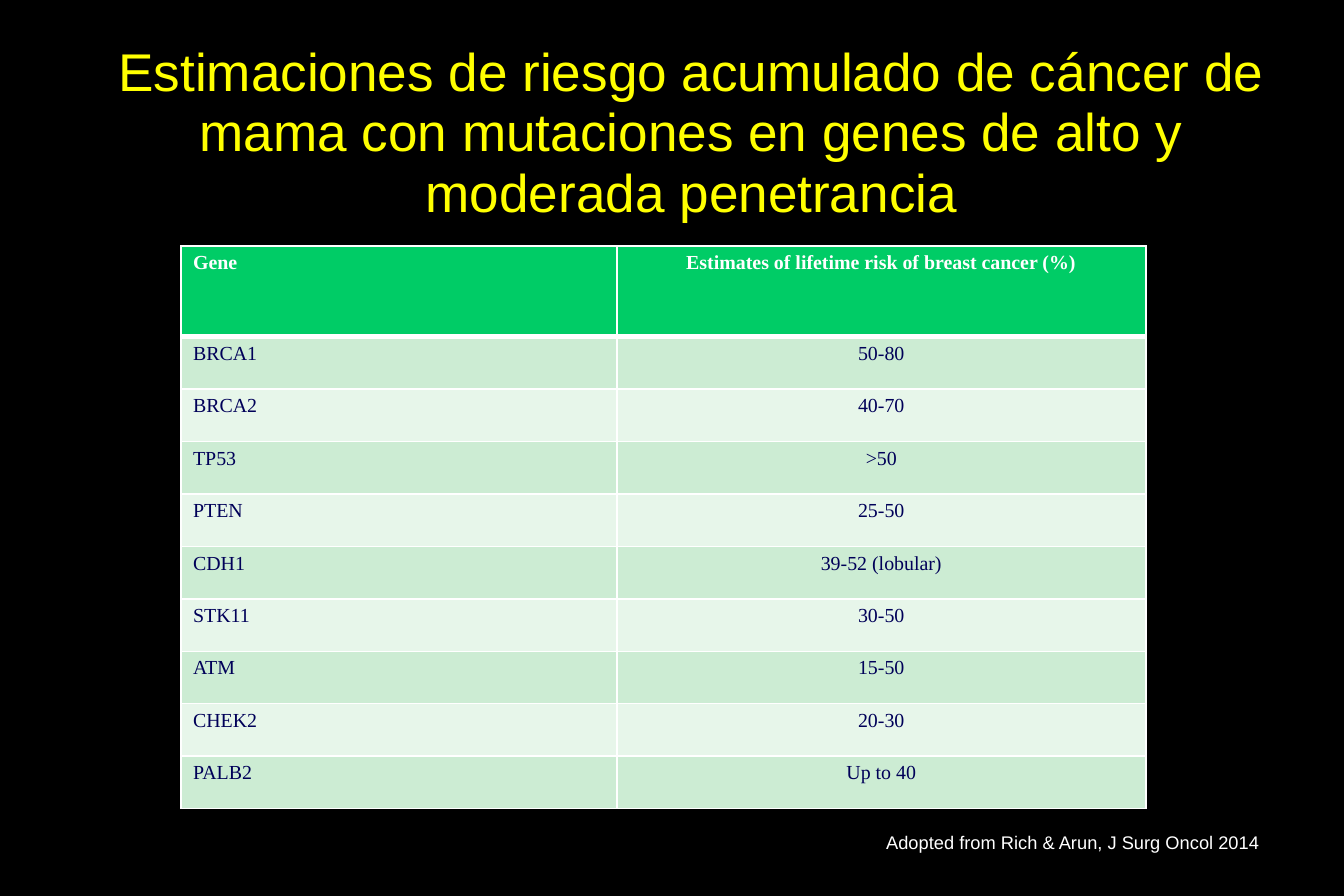
import dataclasses

import lxml.etree
import pptx
import pptx.dml.color
import pptx.enum.text
import pptx.oxml.ns
import pptx.util

Pt = pptx.util.Pt
ALIGN = pptx.enum.text.PP_ALIGN


@dataclasses.dataclass(frozen=True)
class Theme:
    back: str = "000000"
    title: str = "FFFF00"
    light: str = "FFFFFF"
    ink: str = "000058"
    head: str = "00CC66"
    bands: tuple = ("CCECD3", "E7F6EA")
    sans: str = "Arial"
    serif: str = "Times New Roman"
    big: int = 32
    mid: int = 12
    small: int = 11


theme = Theme()
rgb = pptx.dml.color.RGBColor.from_string


def style(para, face, size, color, bold=False):
    font = para.font
    font.name, font.size, font.bold = face, Pt(size), bold
    font.color.rgb = rgb(color)


def edge(cell, side, width):
    """Draw one cell border; side is L, R, T or B."""
    qn = pptx.oxml.ns.qn
    line = lxml.etree.SubElement(
        cell._tc.get_or_add_tcPr(), qn(f"a:ln{side}"), w=str(Pt(width)))
    fill = lxml.etree.SubElement(line, qn("a:solidFill"))
    lxml.etree.SubElement(fill, qn("a:srgbClr"), val=theme.light)


deck = pptx.Presentation()
deck.slide_width, deck.slide_height = Pt(810), Pt(540)
slide = deck.slides.add_slide(deck.slide_layouts[5])
slide.background.fill.solid()
slide.background.fill.fore_color.rgb = rgb(theme.back)

title = slide.shapes.title
title.left, title.top, title.width, title.height = (
    Pt(50.4), Pt(5.76), Pt(732.96), Pt(133.2))
frame = title.text_frame
frame.text = ("Estimaciones de riesgo acumulado de cáncer de mama "
              "con mutaciones en genes de alto y moderada penetrancia")
frame.word_wrap = True
frame.auto_size = pptx.enum.text.MSO_AUTO_SIZE.NONE
frame.vertical_anchor = pptx.enum.text.MSO_ANCHOR.BOTTOM
para = frame.paragraphs[0]
para.alignment = ALIGN.CENTER
para.line_spacing = 0.95
style(para, theme.sans, theme.big, theme.title)

risks = [
    ("Gene", "Estimates of lifetime risk of breast cancer (%)"),
    ("BRCA1", "50-80"),
    ("BRCA2", "40-70"),
    ("TP53", ">50"),
    ("PTEN", "25-50"),
    ("CDH1", "39-52 (lobular)"),
    ("STK11", "30-50"),
    ("ATM", "15-50"),
    ("CHEK2", "20-30"),
    ("PALB2", "Up to 40"),
]
table = slide.shapes.add_table(
    len(risks), 2, Pt(109.2), Pt(148.2), Pt(581.4), Pt(339.4)).table
table.columns[0].width, table.columns[1].width = Pt(262.6), Pt(318.8)

for row, texts in enumerate(risks):
    first = row == 0
    table.rows[row].height = Pt(54.7 if first else 31.63)
    shade = theme.head if first else theme.bands[(row - 1) % 2]
    for col, text in enumerate(texts):
        cell = table.cell(row, col)
        cell.text = text
        para = cell.text_frame.paragraphs[0]
        para.alignment = ALIGN.CENTER if col else ALIGN.LEFT
        style(para, theme.serif, theme.mid,
              theme.light if first else theme.ink, first)
        edge(cell, "L", 1)
        edge(cell, "R", 1)
        edge(cell, "T", 3 if row == 1 else 1)
        edge(cell, "B", 3 if first else 1)
        cell.fill.solid()
        cell.fill.fore_color.rgb = rgb(shade)

credit = slide.shapes.add_textbox(Pt(527), Pt(497.5), Pt(260), Pt(20.9))
frame = credit.text_frame
frame.word_wrap = True
frame.text = "Adopted from Rich & Arun, J Surg Oncol 2014"
style(frame.paragraphs[0], theme.sans, theme.small, theme.light)

deck.save("out.pptx")
